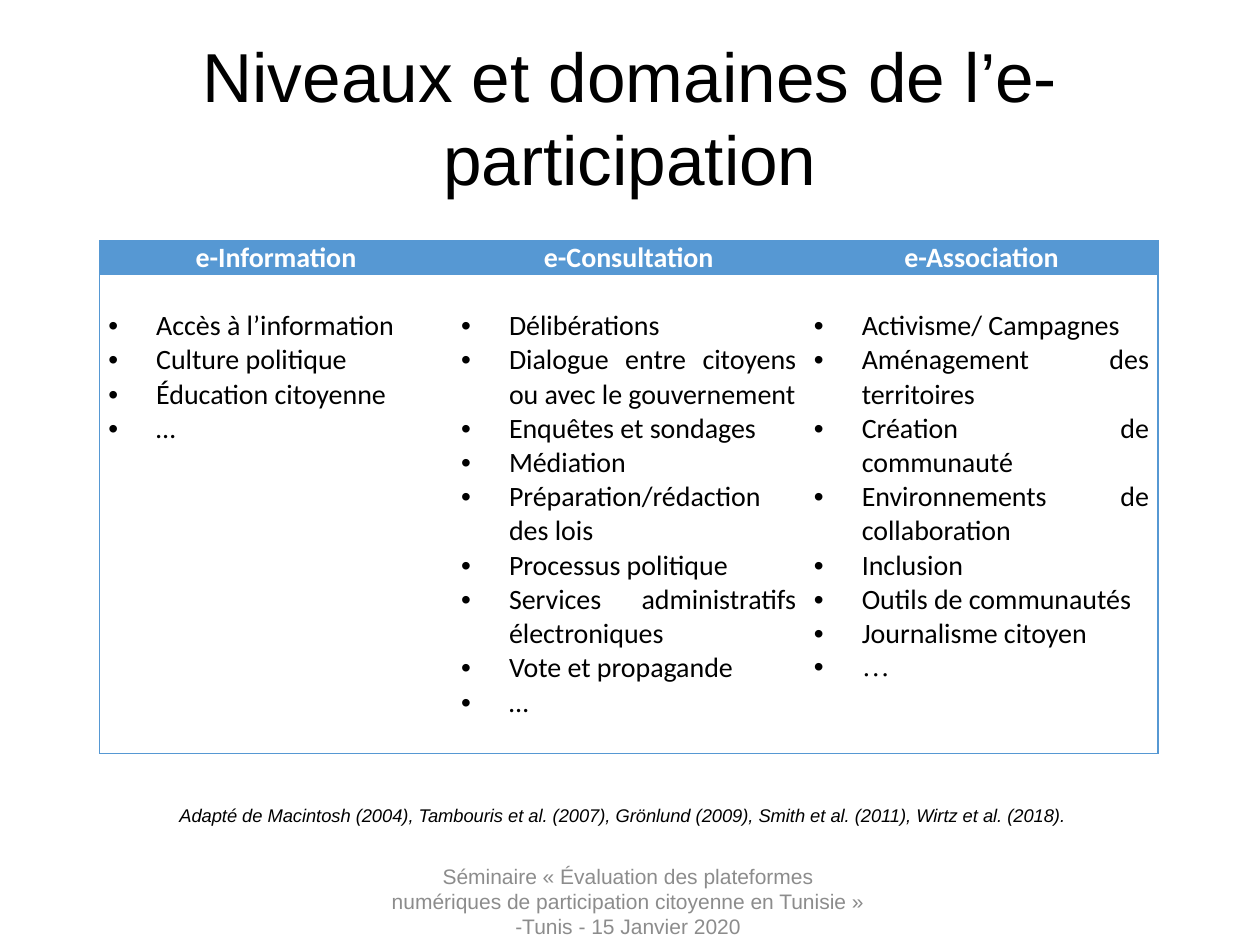
from dataclasses import dataclass
from pptx import Presentation
from pptx.dml.color import RGBColor as RGB
from pptx.enum.text import MSO_ANCHOR as Anchor, MSO_AUTO_SIZE as Fit, PP_ALIGN as Align
from pptx.oxml.ns import qn
from pptx.util import Inches, Pt
from lxml.etree import SubElement as Sub


@dataclass
class Theme:
    blue: str = "5698D3"
    black: str = "000000"
    white: str = "FFFFFF"
    grey: str = "8C8C8C"
    head: float = 39.6
    cell: float = 16
    foot: float = 12
    note: float = 10.5
    font: str = "Arial"
    grid: str = "Calibri"


theme = Theme()
topics = {
    "e-Information": ["Accès à l’information", "Culture politique", "Éducation citoyenne", "…"],
    "e-Consultation": [
        "Délibérations", "Dialogue entre citoyens ou avec le gouvernement",
        "Enquêtes et sondages", "Médiation", "Préparation/rédaction des lois",
        "Processus politique", "Services administratifs électroniques",
        "Vote et propagande", "…"],
    "e-Association": [
        "Activisme/ Campagnes", "Aménagement des territoires", "Création de communauté",
        "Environnements de collaboration", "Inclusion", "Outils de communautés",
        "Journalisme citoyen", "…"],
}


def style(par, size, color, font=theme.font, align=Align.CENTER, bold=False, italic=False):
    par.alignment = align
    for run in par.runs:
        face = run.font
        face.name, face.size, face.bold, face.italic = font, Pt(size), bold, italic
        face.color.rgb = RGB.from_string(color)


def border(cell, sides):
    """Draw thin blue lines on the given sides, in the order L, R, T, B."""
    props = cell._tc.get_or_add_tcPr()
    for side in sides:
        line = Sub(props, qn(f"a:ln{side}"), w=str(Pt(0.75)))
        Sub(Sub(line, qn("a:solidFill")), qn("a:srgbClr"), val=theme.blue)


deck = Presentation()
deck.slide_width, deck.slide_height = Inches(10), Inches(7.5)
slide = deck.slides.add_slide(deck.slide_layouts[5])

# Title
title = slide.shapes.title
title.left, title.top = Inches(0.5), Inches(0.3)
title.width, title.height = Inches(9), Inches(1.25)
frame = title.text_frame
frame.text = "Niveaux et domaines de l’e-participation"
frame.auto_size = Fit.NONE
frame.vertical_anchor = Anchor.MIDDLE
style(frame.paragraphs[0], theme.head, theme.black)

# Table of levels and their topics
table = slide.shapes.add_table(
    2, len(topics), Inches(0.79), Inches(1.91), Inches(8.4), Inches(4.07)).table
table.first_row = table.horz_banding = False
table._tbl.tblPr.find(qn("a:tableStyleId")).text = "{2D5ABB26-0587-4C30-8999-92F81FD0307C}"
table.rows[0].height, table.rows[1].height = Inches(0.27), Inches(3.8)

for col, (level, items) in enumerate(topics.items()):
    edge = {0: "L", len(topics) - 1: "R"}.get(col, "")
    head, body = table.cell(0, col), table.cell(1, col)
    for cell, sides in ((head, "T"), (body, "TB")):
        cell.margin_left = cell.margin_right = Inches(0.07)
        cell.margin_top = cell.margin_bottom = 0
        border(cell, edge + sides)
        cell.fill.solid()
    head.fill.fore_color.rgb = RGB.from_string(theme.blue)
    body.fill.fore_color.rgb = RGB.from_string(theme.white)
    body.margin_top = Inches(0.27)

    head.text_frame.text = level
    style(head.text_frame.paragraphs[0], theme.cell, theme.white, theme.grid, bold=True)

    body.text_frame.text = "\n".join(items)
    for par in body.text_frame.paragraphs:
        style(par, theme.cell, theme.black, theme.grid, Align.JUSTIFY)
        props = par._p.get_or_add_pPr()
        props.set("marL", str(Inches(0.38)))
        props.set("indent", str(-Inches(0.38)))
        Sub(props, qn("a:buFont"), typeface=theme.font)
        Sub(props, qn("a:buChar"), char="•")

table.cell(1, 2).text_frame.paragraphs[-1].runs[0].font.name = "Times New Roman"

# Sources and footer
sources = ("Adapté de Macintosh (2004), Tambouris et al. (2007), Grönlund (2009), "
           "Smith et al. (2011), Wirtz et al. (2018).")
event = ("Séminaire « Évaluation des plateformes numériques de participation "
         "citoyenne en Tunisie » -Tunis - 15 Janvier 2020")
for text, left, top, width, height, size, color, anchor, italic in (
        (sources, 0.75, 6.33, 8.39, 0.45, theme.note, theme.black, Anchor.TOP, True),
        (event, 2.96, 6.95, 4.05, 0.4, theme.foot, theme.grey, Anchor.MIDDLE, False)):
    box = slide.shapes.add_textbox(Inches(left), Inches(top), Inches(width), Inches(height))
    frame = box.text_frame
    frame.word_wrap = True
    frame.vertical_anchor = anchor
    frame.text = text
    style(frame.paragraphs[0], size, color, italic=italic)

deck.save("out.pptx")
